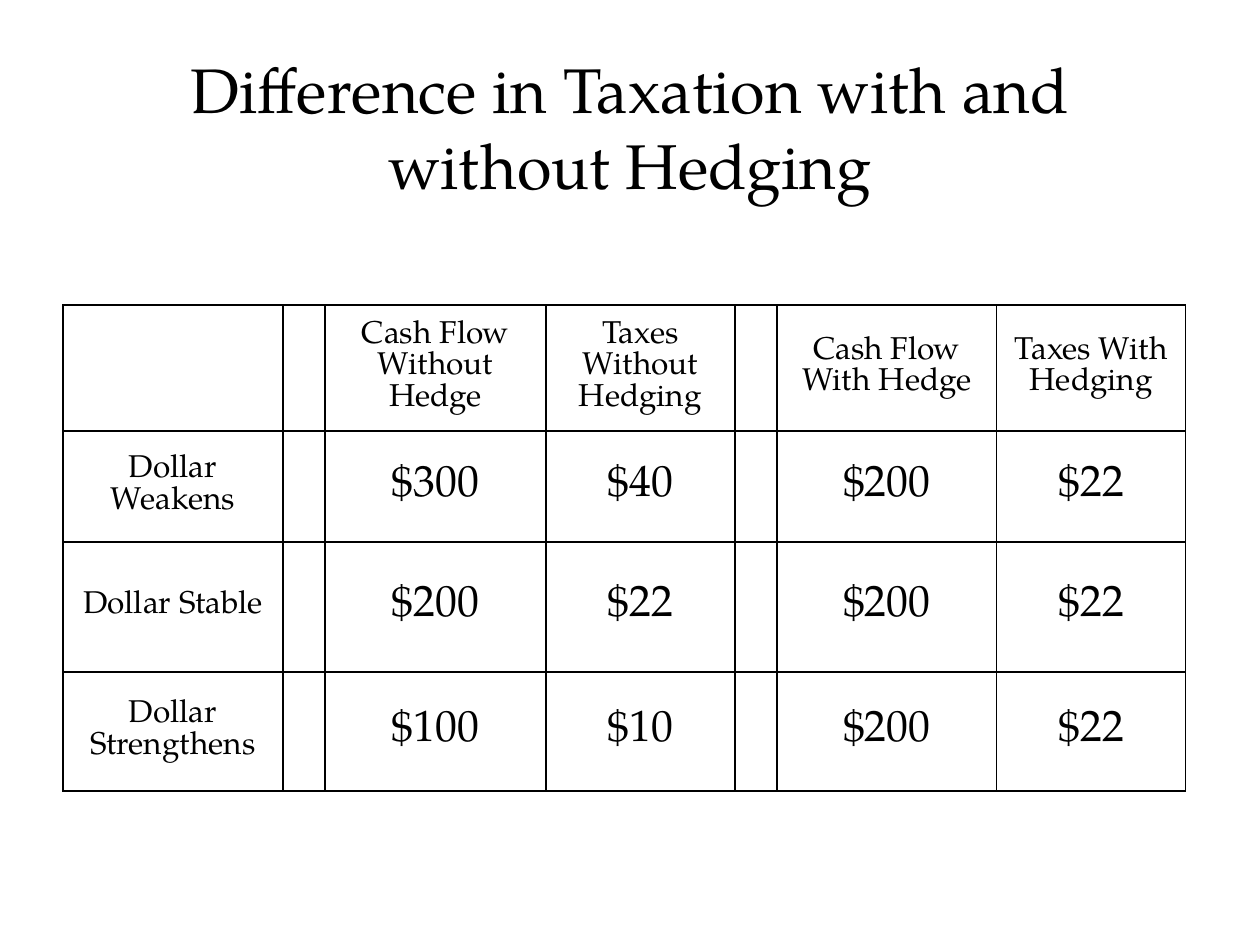
from lxml.etree import SubElement
from pptx import Presentation
from pptx.dml.color import RGBColor
from pptx.enum.text import MSO_ANCHOR, PP_ALIGN
from pptx.oxml.ns import qn
from pptx.util import Emu, Pt

PX = 914400 // 126  # one px in EMU
FONT = "TeX Gyre Pagella"
BLACK = RGBColor(0, 0, 0)

COLUMN_WIDTHS = [220, 42, 221, 189, 42, 220, 189]
ROW_HEIGHTS = [126, 111, 130, 119]
TAXATION = [
    ["", "", "Cash Flow Without Hedge", "Taxes Without Hedging",
     "", "Cash Flow With Hedge", "Taxes With Hedging"],
    ["Dollar Weakens", "", "$300", "$40", "", "$200", "$22"],
    ["Dollar Stable", "", "$200", "$22", "", "$200", "$22"],
    ["Dollar Strengthens", "", "$100", "$10", "", "$200", "$22"],
]


def px(length):
    return Emu(length * PX)


def write(frame, words, size):
    """Write one centred paragraph."""
    paragraph = frame.paragraphs[0]
    paragraph.alignment = PP_ALIGN.CENTER
    paragraph.line_spacing = 1.0
    paragraph.space_before = Pt(0)
    run = paragraph.add_run()
    run.text = words
    run.font.size = Pt(size)
    run.font.name = FONT
    run.font.color.rgb = BLACK


def border(cell):
    """Draw a thin black line on all four sides."""
    properties = cell._tc.get_or_add_tcPr()
    for position, side in enumerate(("lnL", "lnR", "lnT", "lnB")):
        line = SubElement(properties, qn(f"a:{side}"), w=str(Pt(1)))
        properties.remove(line)
        properties.insert(position, line)
        fill = SubElement(line, qn("a:solidFill"))
        SubElement(fill, qn("a:srgbClr"), val=str(BLACK))


def place_title(slide, left, top, width, height):
    title = slide.shapes.title
    title.left, title.top = px(left), px(top)
    title.width, title.height = px(width), px(height)
    frame = title.text_frame
    frame.word_wrap = True
    frame.vertical_anchor = MSO_ANCHOR.MIDDLE
    frame.margin_bottom = px(68)  # lifts the two lines
    write(frame, "Difference in Taxation with and without Hedging", 36)


def place_taxation_table(slide, left, top):
    taxation = slide.shapes.add_table(
        len(ROW_HEIGHTS), len(COLUMN_WIDTHS), px(left), px(top),
        px(sum(COLUMN_WIDTHS)), px(sum(ROW_HEIGHTS))).table
    taxation.first_row = taxation.horz_banding = False
    for column, width in zip(taxation.columns, COLUMN_WIDTHS):
        column.width = px(width)
    for row, height, entries in zip(taxation.rows, ROW_HEIGHTS, TAXATION):
        row.height = px(height)
        for cell, entry in zip(row.cells, entries):
            cell.fill.background()
            cell.vertical_anchor = MSO_ANCHOR.MIDDLE
            border(cell)
            if entry:
                # Amounts are larger than headings
                write(cell.text_frame, entry, 25 if entry.startswith("$") else 18)


def main():
    presentation = Presentation()
    presentation.slide_width, presentation.slide_height = px(1260), px(945)
    slide = presentation.slides.add_slide(presentation.slide_layouts[5])
    place_title(slide, 94, 94, 1072, 126)
    place_taxation_table(slide, 63, 305)
    presentation.save("out.pptx")


if __name__ == "__main__":
    main()
